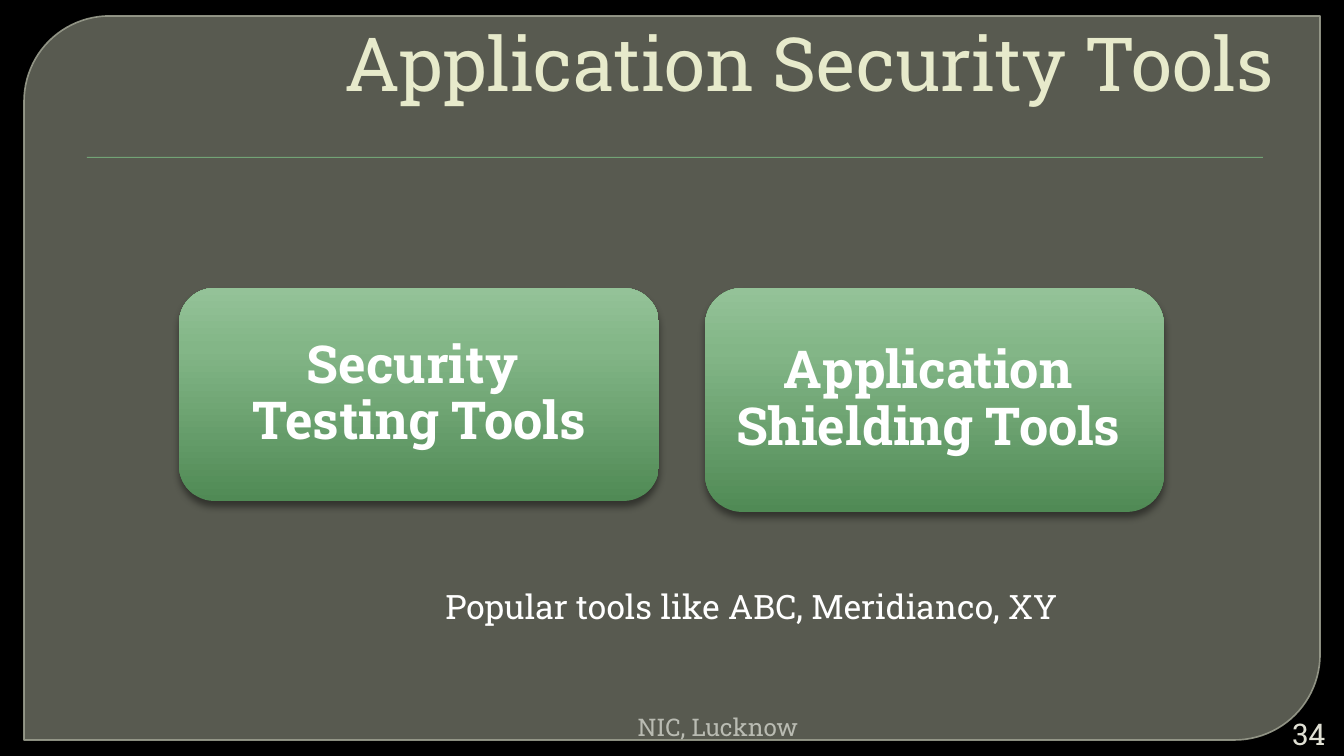
from dataclasses import dataclass
from typing import NamedTuple

from pptx import Presentation
from pptx.dml.color import RGBColor
from pptx.enum.shapes import MSO_SHAPE
from pptx.enum.text import MSO_ANCHOR, MSO_AUTO_SIZE, PP_ALIGN
from pptx.oxml import parse_xml
from pptx.oxml.ns import nsdecls, qn
from pptx.util import Emu, Pt


@dataclass(frozen=True)
class Theme:
    """Colours, font and type sizes of the deck."""
    font: str = "Roboto Slab"
    backdrop: str = "000000"
    panel: str = "888B7B"
    panel_edge: str = "9DA090"
    rule: str = "72A376"
    title: str = "E7EACB"
    text: str = "FFFFFF"
    footer: str = "B9BBB2"
    number: str = "E0E0D4"
    shadow: str = "000000"
    card_stops: tuple = ((0, "508A55"), (72, "83B687"), (100, "94C298"))
    title_size: int = 40
    card_size: int = 28
    body_size: int = 18
    number_size: int = 16
    footer_size: int = 13


class Box(NamedTuple):
    """A rectangle in px."""
    left: int
    top: int
    width: int
    height: int


THEME = Theme()
PAGE = Box(0, 0, 1344, 756)


def px(length):
    """Turn px into EMU."""
    return Emu(round(length * 914400 / 134.4))


def place(shape, box):
    """Move and size a shape to a box."""
    shape.left, shape.top, shape.width, shape.height = map(px, box)


def write(frame, text, size, color, align=PP_ALIGN.LEFT, anchor=MSO_ANCHOR.TOP,
          bold=False, spacing=1.0, indent=0):
    """Fill a text frame, one paragraph for each line of text."""
    frame.word_wrap = True
    frame.auto_size = MSO_AUTO_SIZE.NONE
    frame.vertical_anchor = anchor
    for index, line in enumerate(text.split("\n")):
        para = frame.paragraphs[0] if index == 0 else frame.add_paragraph()
        properties = para._p.get_or_add_pPr()
        properties.set("marL", str(px(indent)))
        properties.set("indent", "0")
        para.alignment = align
        para.line_spacing = spacing
        para.space_before = Pt(0)
        properties.append(parse_xml(f'<a:buNone {nsdecls("a")}/>'))
        span = para.add_run()
        span.text = line
        span.font.name = THEME.font
        span.font.size = Pt(size)
        span.font.bold = bold
        span.font.color.rgb = RGBColor.from_string(color)


def set_alpha(fill, percent):
    """Make a solid fill partly transparent."""
    color = fill._xPr.find(qn("a:solidFill"))[0]
    color.append(parse_xml(f'<a:alpha {nsdecls("a")} val="{percent * 1000}"/>'))


def add_plain(page, kind, box, color):
    """Add a preset shape with a solid fill, no line and no shadow."""
    shape = page.shapes.add_shape(kind, *map(px, box))
    shape.shadow.inherit = False
    shape.fill.solid()
    shape.fill.fore_color.rgb = RGBColor.from_string(color)
    shape.line.fill.background()
    return shape


def add_shadow(shape, alpha, blur, distance):
    """Cast a shadow straight down, with lengths in points."""
    effects = shape.element.spPr.find(qn("a:effectLst"))
    effects.append(parse_xml(
        f'<a:outerShdw {nsdecls("a")} blurRad="{Pt(blur)}" dist="{Pt(distance)}" '
        f'dir="5400000" rotWithShape="0"><a:srgbClr val="{THEME.shadow}">'
        f'<a:alpha val="{alpha * 1000}"/></a:srgbClr></a:outerShdw>'))


def set_gradient(shape, stops):
    """Fill a shape with a gradient that runs from bottom to top."""
    marks = "".join(f'<a:gs pos="{position * 1000}"><a:srgbClr val="{color}"/></a:gs>'
                    for position, color in stops)
    gradient = parse_xml(f'<a:gradFill {nsdecls("a")} rotWithShape="1"><a:gsLst>{marks}'
                         '</a:gsLst><a:lin ang="16200000" scaled="0"/></a:gradFill>')
    properties = shape.element.spPr
    properties.replace(properties.find(qn("a:solidFill")), gradient)


def add_frame(page, box):
    """Draw the panel and its rule behind everything else."""
    panel = add_plain(page, MSO_SHAPE.ROUND_2_DIAG_RECTANGLE, box, THEME.panel)
    panel.adjustments[0] = 0.118
    panel.adjustments[1] = 0
    set_alpha(panel.fill, 65)
    panel.line.width = Pt(0.87)
    panel.line.fill.solid()
    panel.line.fill.fore_color.rgb = RGBColor.from_string(THEME.panel_edge)
    set_alpha(panel.line.fill, 88)
    rule = add_plain(page, MSO_SHAPE.RECTANGLE,
                     Box(box.left + 63, box.top + 141, box.width - 120, 1), THEME.rule)
    add_shadow(rule, alpha=75, blur=1, distance=1)
    for depth, shape in enumerate((panel, rule), start=2):
        page.shapes.element.insert(depth, shape.element)


def add_title(page, box, text):
    """Place the title."""
    place(page.shapes.title, box)
    write(page.shapes.title.text_frame, text, THEME.title_size, THEME.title,
          align=PP_ALIGN.RIGHT, anchor=MSO_ANCHOR.BOTTOM, indent=8)


def add_body(page, box, text):
    """Place the line of text below the cards."""
    body = page.placeholders[1]
    place(body, box)
    write(body.text_frame, text, THEME.body_size, THEME.text, indent=230)


def add_card(page, box, text):
    """Draw one green card with its label."""
    card = add_plain(page, MSO_SHAPE.ROUNDED_RECTANGLE, box, THEME.rule)
    set_gradient(card, THEME.card_stops)
    add_shadow(card, alpha=43, blur=4, distance=3)
    frame = card.text_frame
    frame.margin_left = frame.margin_right = px(11)
    frame.margin_top = frame.margin_bottom = px(5)
    write(frame, text, THEME.card_size, THEME.text, align=PP_ALIGN.CENTER,
          anchor=MSO_ANCHOR.MIDDLE, bold=True, spacing=0.9)


def add_cards(page, box):
    """Set the two cards against the sides of a box."""
    add_card(page, Box(box.left, box.top, 480, 213), "Security \nTesting Tools")
    add_card(page, Box(box.left + box.width - 459, box.top, 459, box.height),
             "Application \nShielding Tools ")


def add_footer(page, box):
    """Write the footer and the page number."""
    footer = page.shapes.add_textbox(*map(px, (box.left, box.top, 620, 31)))
    write(footer.text_frame, "NIC, Lucknow", THEME.footer_size, THEME.footer,
          align=PP_ALIGN.RIGHT)
    number = page.shapes.add_textbox(
        *map(px, (box.left + box.width - 69, box.top + 12, 69, 31)))
    write(number.text_frame, "34", THEME.number_size, THEME.number,
          align=PP_ALIGN.RIGHT, anchor=MSO_ANCHOR.MIDDLE)


def main():
    """Build and save the deck."""
    deck = Presentation()
    deck.slide_width, deck.slide_height = px(PAGE.width), px(PAGE.height)
    page = deck.slides.add_slide(deck.slide_layouts[1])
    page.background.fill.solid()
    page.background.fill.fore_color.rgb = RGBColor.from_string(THEME.backdrop)
    add_frame(page, Box(24, 16, 1296, 724))
    add_title(page, Box(78, -13, 1210, 126), "Application Security Tools")
    add_body(page, Box(202, 579, 1109, 78), "Popular tools like ABC, Meridianco, XY")
    add_cards(page, Box(179, 288, 985, 224))
    add_footer(page, Box(191, 706, 1148, 43))
    deck.save("out.pptx")


if __name__ == "__main__":
    main()
